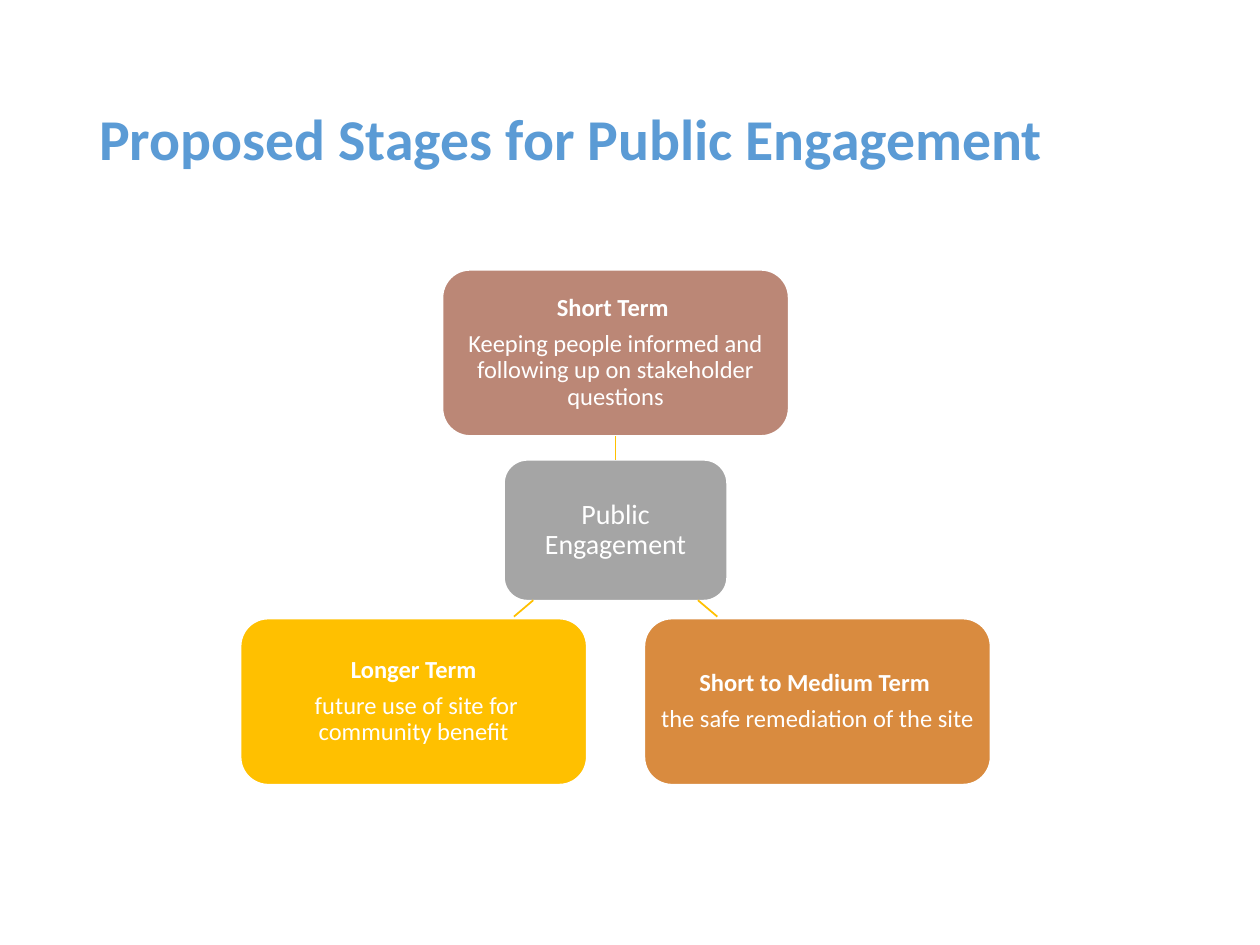
"""Build the slide on the proposed stages for public engagement."""
from lxml.etree import SubElement
from pptx import Presentation
from pptx.dml.color import RGBColor
from pptx.enum.shapes import MSO_CONNECTOR, MSO_SHAPE
from pptx.enum.text import MSO_ANCHOR, PP_ALIGN
from pptx.oxml.ns import qn
from pptx.util import Cm, Pt

BLUE = RGBColor(0x5B, 0x9B, 0xD5)
GREY = RGBColor(0xA5, 0xA5, 0xA5)
ROSE = RGBColor(0xBB, 0x87, 0x76)
ORANGE = RGBColor(0xD9, 0x8B, 0x3F)
GOLD = RGBColor(0xFF, 0xC0, 0x00)
WHITE = RGBColor(0xFF, 0xFF, 0xFF)

CENTRE = 12.41
STAGE_SIZE = (6.98, 3.35)
HUB_SIZE = (4.5, 2.84)
STAGE_OFFSET = 4.07


class SlideBuilder:
    """Hold the style and the current slide."""

    font = "Calibri"
    line_width = Pt(1)

    def __init__(self, prs):
        self.s = prs.slides.add_slide(prs.slide_layouts[6])

    def style(self, p, size, color, bold=False):
        """Format one paragraph and its runs."""
        p.line_spacing = 0.9
        for r in p.runs:
            r.font.name = self.font
            r.font.size = Pt(size)
            r.font.bold = bold
            r.font.color.rgb = color

    def title(self, text):
        """Add the slide title."""
        sp = self.s.shapes.add_textbox(Cm(1.75), Cm(1.02), Cm(21.89), Cm(3.68))
        tf = sp.text_frame
        tf.word_wrap = True
        tf.vertical_anchor = MSO_ANCHOR.MIDDLE
        tf.text = text
        self.style(tf.paragraphs[0], 33, BLUE, True)

    def box(self, centre, top, dimensions, fill, text, size, heading=False):
        """Add a rounded box, with a bold first line if it has a heading."""
        width, height = dimensions
        sp = self.s.shapes.add_shape(
            MSO_SHAPE.ROUNDED_RECTANGLE,
            Cm(centre - width / 2), Cm(top), Cm(width), Cm(height))
        sp.shadow.inherit = False
        sp.fill.solid()
        sp.fill.fore_color.rgb = fill
        sp.line.color.rgb = WHITE
        sp.line.width = self.line_width
        tf = sp.text_frame
        tf.word_wrap = True
        tf.vertical_anchor = MSO_ANCHOR.MIDDLE
        tf.margin_left = tf.margin_right = Cm(0.1)
        tf.margin_top = tf.margin_bottom = Cm(0.1)
        tf.text = text
        for i, p in enumerate(tf.paragraphs):
            p.alignment = PP_ALIGN.CENTER
            p.space_after = Pt(5.5)
            self.style(p, size, WHITE, heading and i == 0)
        return sp

    def link(self, x1, y1, x2, y2):
        """Add a thin gold connector."""
        line = self.s.shapes.add_connector(
            MSO_CONNECTOR.STRAIGHT, Cm(x1), Cm(y1), Cm(x2), Cm(y2))
        line.line.color.rgb = GOLD
        line.line.width = self.line_width
        SubElement(line._element.spPr, qn("a:effectLst"))
        return line


def main():
    """Build and save the presentation."""
    prs = Presentation()
    prs.slide_width, prs.slide_height = Cm(25.4), Cm(19.05)
    slide = SlideBuilder(prs)
    slide.title("Proposed Stages for Public Engagement")

    hub = slide.box(CENTRE, 9.27, HUB_SIZE, GREY, "Public Engagement", 16)
    stages = [
        (0, 5.44, ROSE, "Short Term \nKeeping people informed and "
                        "following up on stakeholder questions"),
        (1, 12.47, ORANGE,
         "Short to Medium Term \nthe safe remediation of the site"),
        (-1, 12.47, GOLD,
         "Longer Term\n future use of site for community benefit"),
    ]
    for side, top, fill, text in stages:
        stage = slide.box(CENTRE + side * STAGE_OFFSET, top, STAGE_SIZE,
                          fill, text, 14, heading=True)
        link = slide.link(CENTRE + side * 1.66, 12.1,
                          CENTRE + side * 2.05, 12.43)
        if side == 0:
            link.begin_connect(hub, 0)
            link.end_connect(stage, 2)

    prs.save("out.pptx")


if __name__ == "__main__":
    main()
